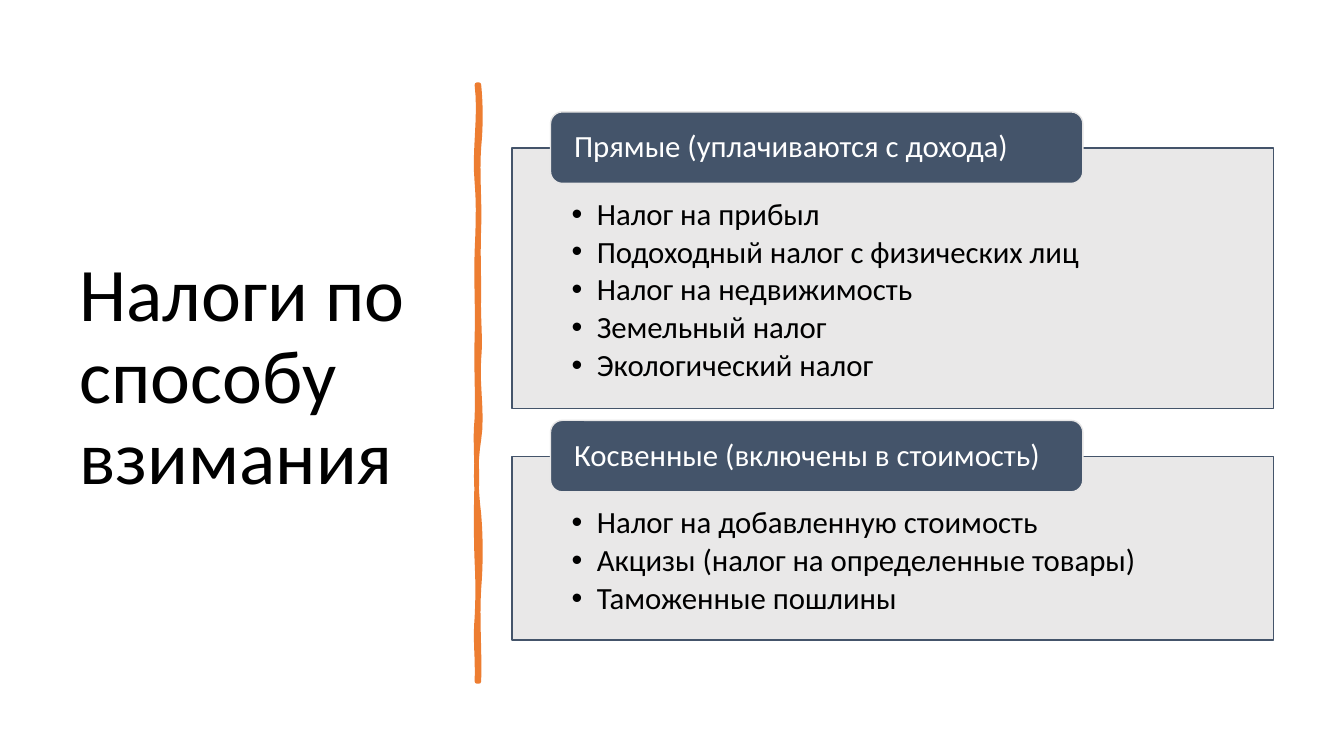
from lxml import etree
from pptx import Presentation
from pptx import util as u
from pptx.dml.color import RGBColor
from pptx.enum import shapes, text
from pptx.oxml.ns import qn

PX = 9144  # EMU in one px, 100 px to the inch
FONT = "Calibri"
NAVY, GREY, ORANGE, BLACK, WHITE = "44546A", "E7E6E6", "ED7D31", "000000", "FFFFFF"

PANELS = [
    (147, 258, "Прямые (уплачиваются с дохода)", [
        "Налог на прибыл",
        "Подоходный налог с физических лиц",
        "Налог на недвижимость",
        "Земельный налог",
        "Экологический налог",
    ]),
    (453, 182, "Косвенные (включены в стоимость)", [
        "Налог на добавленную стоимость",
        "Акцизы (налог на определенные товары)",
        "Таможенные пошлины",
    ]),
]

# Each bend of the divider: two control x values and the y where it ends
RIGHT_BENDS = [(477, 477, 146), (473, 476, 226), (474, 475, 294), (474, 477, 356),
               (473, 479, 436), (471, 472, 510), (477, 477, 584), (473, 476, 676)]
LEFT_BENDS = [(474, 471, 613), (474, 474, 557), (472, 472, 477), (473, 471, 415),
              (474, 472, 335), (474, 472, 250), (474, 475, 181), (470, 477, 84)]


def px(n):
    return u.Emu(round(n * PX))


def rgb(code):
    return RGBColor.from_string(code)


def paint(s, fill, line, width):
    s.shadow.inherit = False
    s.fill.solid()
    s.fill.fore_color.rgb = rgb(fill)
    s.line.color.rgb = rgb(line)
    s.line.width = u.Pt(width)


def write(s, lines, size, color, margins, anchor):
    tf = s.text_frame
    tf.word_wrap = True
    tf.vertical_anchor = anchor
    tf.margin_left, tf.margin_top, tf.margin_right, tf.margin_bottom = map(px, margins)
    tf.text = "\n".join(lines)
    for p in tf.paragraphs:
        p.alignment = text.PP_ALIGN.LEFT
        p.line_spacing = 0.9
        for r in p.runs:
            r.font.name = FONT
            r.font.size = u.Pt(size)
            r.font.color.rgb = rgb(color)


def add_bullets(tf):
    for p in tf.paragraphs:
        p.space_after = u.Pt(3.3)
        pPr = p._p.get_or_add_pPr()
        pPr.set("marL", str(px(25)))
        pPr.set("indent", str(px(-25)))
        etree.SubElement(pPr, qn("a:buFont"), typeface="Arial")
        etree.SubElement(pPr, qn("a:buChar"), char="•")


def add_title(slide, title):
    s = slide.shapes.add_textbox(px(69), px(70), px(374), px(611))
    write(s, [title], 54, BLACK, (10, 5, 10, 5), text.MSO_ANCHOR.MIDDLE)


def edge_points(x, y, bends, steps=8):
    """Points along one wavy edge whose bends all end at the same x."""
    points = []
    for c1, c2, end in bends:
        for i in range(1, steps + 1):
            t = i / steps
            sway = 3 * t * (1 - t) * ((1 - t) * (c1 - x) + t * (c2 - x))
            points.append((px(x + sway), px(y + t * (end - y))))
        y = end
    return points


def add_divider(slide):
    top, bottom = 84, 676
    builder = slide.shapes.build_freeform(px(475), px(top))
    builder.add_line_segments(
        edge_points(475, top, RIGHT_BENDS)
        + [(px(473), px(bottom))]
        + edge_points(473, bottom, LEFT_BENDS))
    s = builder.convert_to_shape()
    paint(s, ORANGE, ORANGE, 3.25)
    etree.SubElement(s.line._get_or_add_ln(), qn("a:round"))


def add_panel(slide, top, height, heading, taxes):
    body = slide.shapes.add_shape(
        shapes.MSO_SHAPE.RECTANGLE, px(508), px(top), px(755), px(height))
    paint(body, GREY, NAVY, 1)
    color = body.fill._xPr.find(qn("a:solidFill"))[0]
    etree.SubElement(color, qn("a:alpha"), val="90000")
    write(body, taxes, 22, BLACK, (59, 50, 59, 17), text.MSO_ANCHOR.TOP)
    add_bullets(body.text_frame)

    tab = slide.shapes.add_shape(
        shapes.MSO_SHAPE.ROUNDED_RECTANGLE, px(546), px(top - 36), px(528), px(71))
    paint(tab, NAVY, GREY, 1)
    write(tab, [heading], 22, WHITE, (20, 0, 20, 0), text.MSO_ANCHOR.MIDDLE)


def main():
    prs = Presentation()
    prs.slide_width, prs.slide_height = px(1333), px(750)
    slide = prs.slides.add_slide(prs.slide_layouts[6])
    add_title(slide, "Налоги по способу взимания")
    add_divider(slide)
    for panel in PANELS:
        add_panel(slide, *panel)
    prs.save("out.pptx")


if __name__ == "__main__":
    main()
